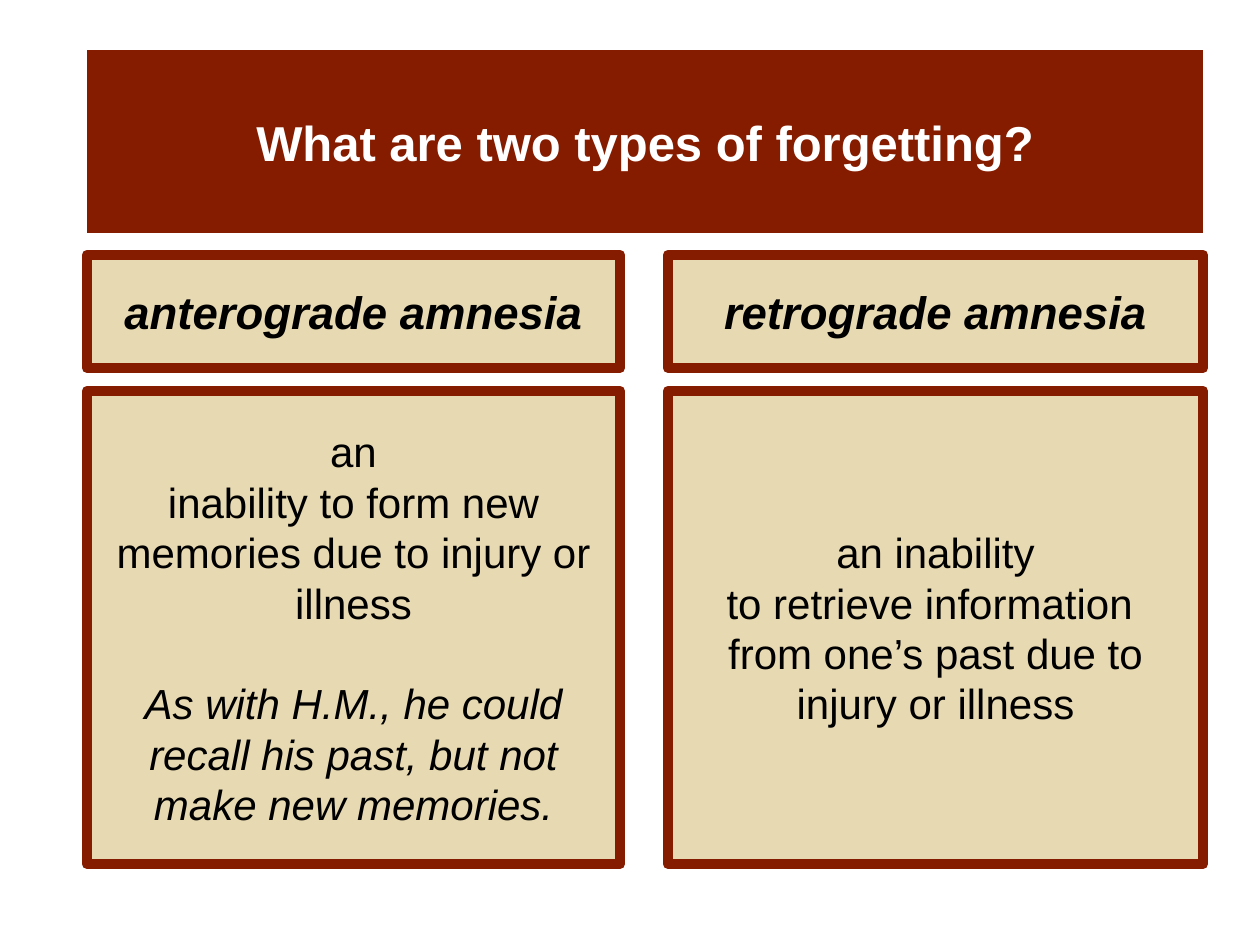
from dataclasses import dataclass

from pptx import Presentation
from pptx.dml.color import RGBColor
from pptx.enum.shapes import MSO_SHAPE
from pptx.enum.text import MSO_ANCHOR, PP_ALIGN
from pptx.slide import Slide
from pptx.util import Emu, Pt

PX_PER_INCH = 126
BRICK, SAND, WHITE, BLACK = "851C00", "E7D9B1", "FFFFFF", "000000"
LEFT, RIGHT_EDGE = 87, 1203
TITLE_TOP, TITLE_HEIGHT = 50, 183
TERM_TOP, TERM_HEIGHT = 255, 113
MEANING_TOP, MEANING_HEIGHT = 391, 473
MEANING_LINE = 28.8


@dataclass(frozen=True)
class Box:
    left: int
    top: int
    width: int
    height: int


@dataclass(frozen=True)
class Amnesia:
    left: int
    width: int
    term: str
    meaning: tuple[str, ...]
    example: str = ""


AMNESIAS = (
    Amnesia(
        LEFT, 533, "anterograde amnesia",
        ("an", "inability to form new memories due to injury or illness"),
        "As with H.M., he could recall his past, but not make new memories.",
    ),
    Amnesia(
        668, 535, "retrograde amnesia",
        ("an inability", "to retrieve information ",
         "from one’s past due to injury or illness"),
    ),
)


def px(length: int) -> Emu:
    return Emu(round(length * 914400 / PX_PER_INCH))


def rgb(value: str) -> RGBColor:
    return RGBColor.from_string(value)


def add_panel(slide: Slide, box: Box, fill: str, border: str | None = None):
    """Draw a filled rectangle and return its empty, centred text frame."""
    shape = slide.shapes.add_shape(
        MSO_SHAPE.RECTANGLE, px(box.left), px(box.top), px(box.width), px(box.height)
    )
    shape.shadow.inherit = False
    shape.fill.solid()
    shape.fill.fore_color.rgb = rgb(fill)
    if border:
        shape.line.color.rgb = rgb(border)
        shape.line.width = Pt(6)
    else:
        shape.line.fill.background()
    frame = shape.text_frame
    frame.word_wrap = True
    frame.vertical_anchor = MSO_ANCHOR.MIDDLE
    return frame


def write(frame, text: str, *, size: int, color: str = BLACK, bold: bool = False,
          italic: bool = False, line: float | None = None, before: float = 0) -> None:
    """Write a paragraph, filling the first one if the frame is still empty."""
    paragraph = frame.add_paragraph() if frame.text else frame.paragraphs[0]
    paragraph.alignment = PP_ALIGN.CENTER
    paragraph.space_before = Pt(before)
    if line:
        paragraph.line_spacing = Pt(line)
    run = paragraph.add_run()
    run.text = text
    run.font.name = "Arial"
    run.font.size = Pt(size)
    run.font.bold = bold
    run.font.italic = italic
    run.font.color.rgb = rgb(color)


def add_amnesia(slide: Slide, amnesia: Amnesia) -> None:
    term_box = Box(amnesia.left, TERM_TOP, amnesia.width, TERM_HEIGHT)
    term = add_panel(slide, term_box, SAND, BRICK)
    write(term, amnesia.term, size=26, bold=True, italic=True)

    meaning_box = Box(amnesia.left, MEANING_TOP, amnesia.width, MEANING_HEIGHT)
    meaning = add_panel(slide, meaning_box, SAND, BRICK)
    for text in amnesia.meaning:
        write(meaning, text, size=24, line=MEANING_LINE)
    if amnesia.example:
        write(meaning, amnesia.example, size=24, italic=True,
              line=MEANING_LINE, before=MEANING_LINE)


def main() -> None:
    presentation = Presentation()
    presentation.slide_width, presentation.slide_height = px(1260), px(945)
    slide = presentation.slides.add_slide(presentation.slide_layouts[6])

    title_box = Box(LEFT, TITLE_TOP, RIGHT_EDGE - LEFT, TITLE_HEIGHT)
    title = add_panel(slide, title_box, BRICK)
    write(title, "What are two types of forgetting?", size=28, color=WHITE, bold=True)
    for amnesia in AMNESIAS:
        add_amnesia(slide, amnesia)

    presentation.save("out.pptx")


if __name__ == "__main__":
    main()
